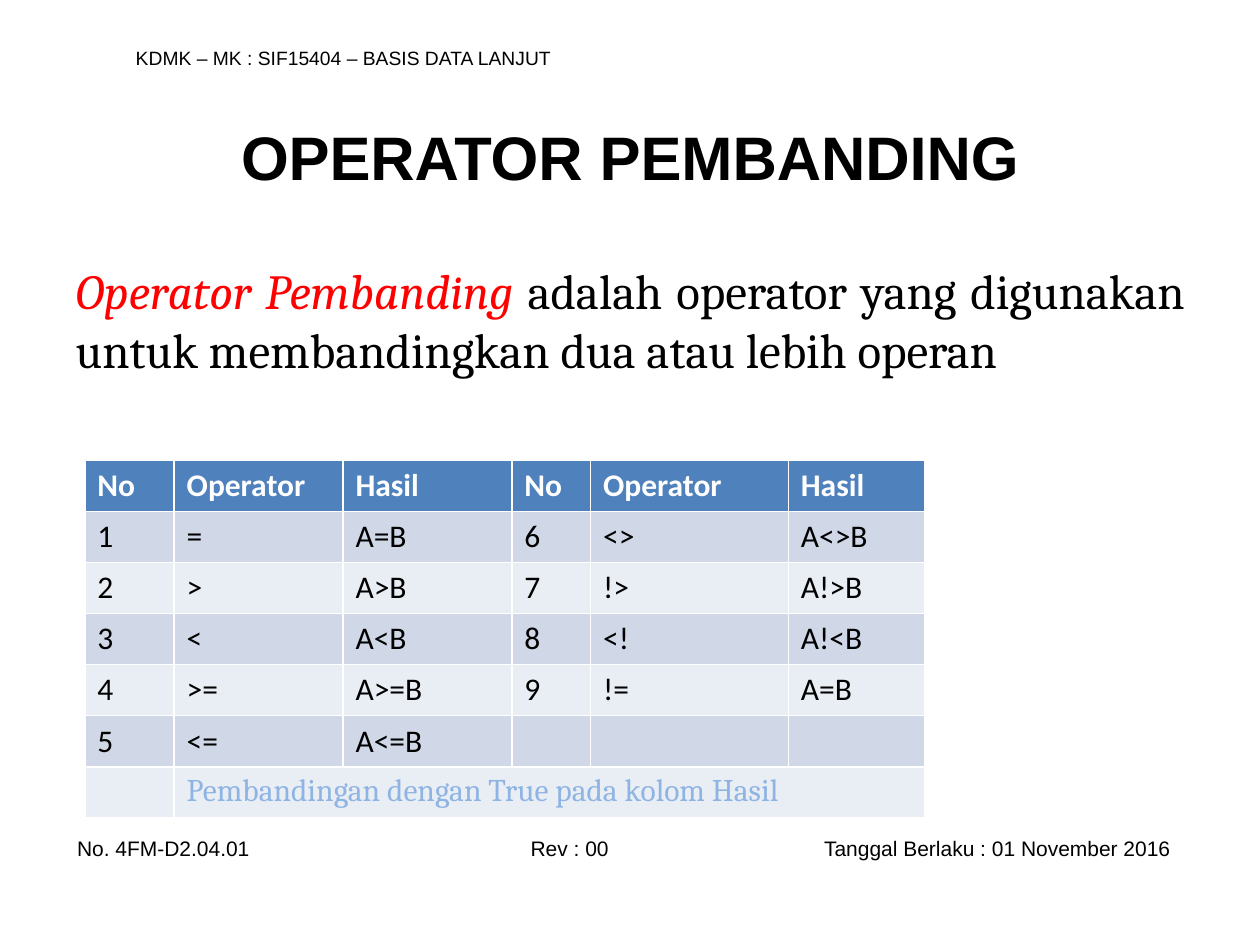
from lxml.etree import SubElement
from pptx import Presentation
from pptx.dml.color import RGBColor
from pptx.enum.text import MSO_ANCHOR as Anchor, MSO_AUTO_SIZE as AutoSize, PP_ALIGN as Align
from pptx.oxml.ns import qn
from pptx.util import Pt

BLACK, WHITE, RED = "000000", "FFFFFF", "FF0000"
HEADER_BLUE, NOTE_BLUE = "4F81BD", "8EB4E3"
BANDS = ["E9EDF4", "D0D8E8"]


def style(font, name, size, color, bold=False, italic=False):
    font.name, font.size = name, Pt(size)
    font.bold, font.italic = bold, italic
    font.color.rgb = RGBColor.from_string(color)


def place(shape, left, top, width, height):
    shape.left, shape.top = Pt(left), Pt(top)
    shape.width, shape.height = Pt(width), Pt(height)


presentation = Presentation()
presentation.slide_width, presentation.slide_height = Pt(720), Pt(540)
slide = presentation.slides.add_slide(presentation.slide_layouts[1])

# Course header and document footer
footer = "No. 4FM-D2.04.01\tRev : 00\tTanggal Berlaku : 01 November 2016"
for text, size, left, top, width, inset in [
    ("KDMK – MK : SIF15404 – BASIS DATA LANJUT", 11, 70.5, 22.3, 601, 7.2),
    (footer, 12, 13, 474, 669, 31),
]:
    box = slide.shapes.add_textbox(Pt(left), Pt(top), Pt(width), Pt(21.5))
    frame = box.text_frame
    frame.word_wrap = True
    frame.vertical_anchor = Anchor.MIDDLE
    frame.margin_left = Pt(inset)
    frame.text = text
    paragraph = frame.paragraphs[0]
    if "\t" in text:
        tabs = SubElement(paragraph._p.get_or_add_pPr(), qn("a:tabLst"))
        for position, alignment in [(281.5, "ctr"), (625, "r")]:
            SubElement(tabs, qn("a:tab"), pos=str(Pt(position)), algn=alignment)
    for run in paragraph.runs:
        style(run.font, "Arial", size, BLACK)

# Title
title = slide.shapes.title
place(title, 36, 44, 648, 90)
title.text_frame.text = "OPERATOR PEMBANDING"
title.text_frame.auto_size = AutoSize.NONE
title.text_frame.vertical_anchor = Anchor.MIDDLE
paragraph = title.text_frame.paragraphs[0]
paragraph.alignment = Align.CENTER
style(paragraph.runs[0].font, "Arial", 35.1, BLACK, bold=True)

# Definition
body = slide.placeholders[1]
place(body, 36, 145.5, 648, 323)
body.text_frame.auto_size = AutoSize.NONE
paragraph = body.text_frame.paragraphs[0]
paragraph.alignment = Align.JUSTIFY
paragraph.space_before = Pt(0)
properties = paragraph._p.get_or_add_pPr()
properties.set("marL", "0")
properties.set("indent", "0")
SubElement(properties, qn("a:buNone"))
for text, color, italic in [
    ("Operator Pembanding ", RED, True),
    ("adalah operator yang digunakan untuk membandingkan dua atau lebih operan", BLACK, False),
]:
    run = paragraph.add_run()
    run.text = text
    style(run.font, "Cambria", 28, color, italic=italic)

# Operator table
rows = [
    ["No", "Operator", "Hasil", "No", "Operator", "Hasil"],
    ["1", "=", "A=B", "6", "<>", "A<>B"],
    ["2", ">", "A>B", "7", "!>", "A!>B"],
    ["3", "<", "A<B", "8", "<!", "A!<B"],
    ["4", ">=", "A>=B", "9", "!=", "A=B"],
    ["5", "<=", "A<=B", "", "", ""],
    ["", "Pembandingan dengan True pada kolom Hasil", "", "", "", ""],
]
widths = [51, 96.5, 96.5, 45, 113, 78]
last = len(rows) - 1
table = slide.shapes.add_table(
    len(rows), len(widths), Pt(48.5), Pt(263), Pt(sum(widths)), Pt(29.2 * len(rows))
).table
for column, width in zip(table.columns, widths):
    column.width = Pt(width)
for r, values in enumerate(rows):
    table.rows[r].height = Pt(29.2)
    for c, value in enumerate(values):
        cell = table.cell(r, c)
        cell.fill.solid()
        cell.fill.fore_color.rgb = RGBColor.from_string(BANDS[r % 2] if r else HEADER_BLUE)
        cell.text_frame.text = value
        for run in cell.text_frame.paragraphs[0].runs:
            if r == last:
                style(run.font, "Cambria", 18, NOTE_BLUE)
            else:
                style(run.font, "Calibri", 18, BLACK if r else WHITE, bold=r == 0)
table.cell(last, 1).merge(table.cell(last, 5))

presentation.save("out.pptx")
